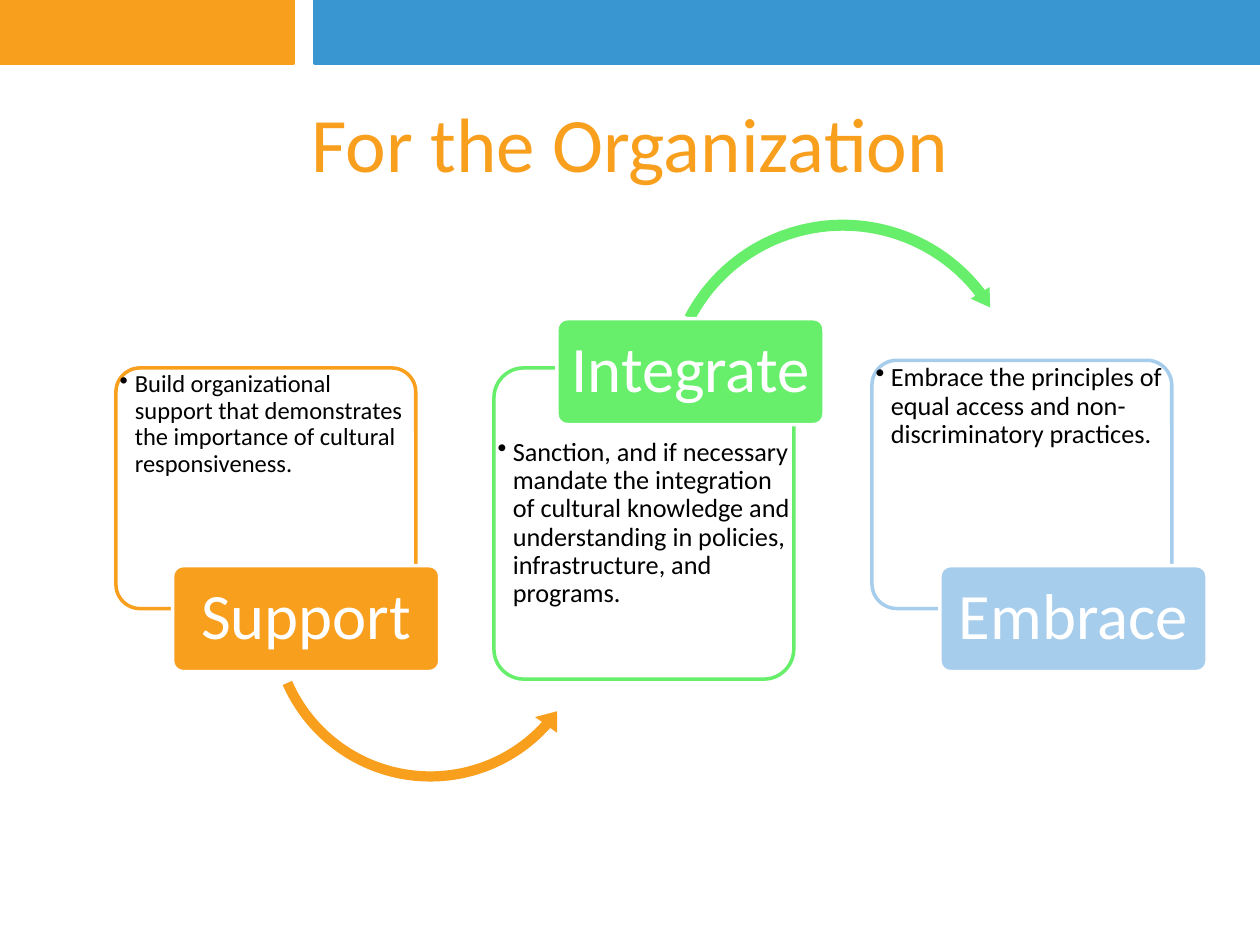
from dataclasses import dataclass
from typing import Optional

import pptx
import pptx.dml.color
import pptx.enum.shapes
import pptx.enum.text
import pptx.oxml.ns
import pptx.util
from lxml import etree

Inches = pptx.util.Inches
Pt = pptx.util.Pt
RGBColor = pptx.dml.color.RGBColor
MSO_SHAPE = pptx.enum.shapes.MSO_SHAPE
MSO_ANCHOR = pptx.enum.text.MSO_ANCHOR
PP_ALIGN = pptx.enum.text.PP_ALIGN
qn = pptx.oxml.ns.qn

ORANGE = RGBColor(0xF8, 0x9F, 0x1E)
BLUE = RGBColor(0x3A, 0x96, 0xD0)
GREEN = RGBColor(0x67, 0xEE, 0x6A)
LIGHT_BLUE = RGBColor(0xA7, 0xCD, 0xED)
WHITE = RGBColor(0xFF, 0xFF, 0xFF)
BLACK = RGBColor(0x00, 0x00, 0x00)

FONT = "Calibri"
CARD_LEFT, CARD_PITCH, CARD_WIDTH = 0.92, 3.0, 2.38
LABEL_WIDTH, LABEL_HEIGHT = 2.12, 0.84
CORNER = 0.1
BULLET_INDENT = 0.12


@dataclass
class Arrow:
    kind: MSO_SHAPE
    left: float
    top: float
    size: float
    adjustments: tuple[float, ...]


@dataclass
class Stage:
    name: str
    detail: str
    color: RGBColor
    card_top: float
    card_height: float
    text_top: float
    text_size: float
    label_left: float
    label_top: float
    arrow: Optional[Arrow] = None


STAGES = [
    Stage("Support",
          "Build organizational support that demonstrates the importance of "
          "cultural responsiveness.",
          ORANGE, 2.92, 1.91, 2.92, 14, 1.37, 4.49,
          Arrow(MSO_SHAPE.LEFT_CIRCULAR_ARROW, 2.07, 3.58, 2.69,
                (0.03, 3.87, 25.22, 93.84, 0.04))),
    Stage("Integrate",
          "Sanction, and if necessary mandate the integration of cultural "
          "knowledge and understanding in policies, infrastructure, and programs.",
          GREEN, 2.92, 2.47, 3.45, 15, 4.42, 2.53,
          Arrow(MSO_SHAPE.CIRCULAR_ARROW, 5.23, 1.7, 2.92,
                (0.03, 3.53, 193.51, 124.55, 0.03))),
    Stage("Embrace",
          "Embrace the principles of equal access and non-discriminatory practices.",
          LIGHT_BLUE, 2.86, 1.97, 2.86, 15, 7.46, 4.49),
]


def add_filled_shape(slide, kind, left: float, top: float, width: float, height: float,
                     fill: RGBColor, line: Optional[RGBColor] = None,
                     adjustments: tuple[float, ...] = ()):
    shape = slide.shapes.add_shape(
        kind, Inches(left), Inches(top), Inches(width), Inches(height))
    shape.shadow.inherit = False
    shape.fill.solid()
    shape.fill.fore_color.rgb = fill
    if line is None:
        shape.line.fill.background()
    else:
        shape.line.color.rgb = line
        shape.line.width = Pt(2)
    for index, value in enumerate(adjustments):
        shape.adjustments[index] = value
    return shape


def set_opacity(shape, percent: int) -> None:
    color = shape.fill._xPr.find(qn("a:solidFill"))[0]
    etree.SubElement(color, qn("a:alpha")).set("val", str(percent * 1000))


def write_text(shape, text: str, *, size: float, color: RGBColor,
               align=PP_ALIGN.CENTER, anchor=MSO_ANCHOR.MIDDLE,
               insets: tuple[float, float] = (0.1, 0.05),
               line_spacing: float = 1.0, wrap: bool = True,
               bullet: bool = False) -> None:
    frame = shape.text_frame
    frame.word_wrap = wrap
    frame.vertical_anchor = anchor
    frame.margin_left = frame.margin_right = Inches(insets[0])
    frame.margin_top = frame.margin_bottom = Inches(insets[1])
    paragraph = frame.paragraphs[0]
    paragraph.alignment = align
    paragraph.line_spacing = line_spacing
    if bullet:
        properties = paragraph._p.get_or_add_pPr()
        properties.set("marL", str(Inches(BULLET_INDENT)))
        properties.set("indent", str(-Inches(BULLET_INDENT)))
        etree.SubElement(properties, qn("a:buChar")).set("char", "•")
    run = paragraph.add_run()
    run.text = text
    run.font.name = FONT
    run.font.size = Pt(size)
    run.font.color.rgb = color


def add_text_box(slide, left: float, top: float, width: float, height: float):
    return slide.shapes.add_textbox(
        Inches(left), Inches(top), Inches(width), Inches(height))


def add_stage(slide, stage: Stage, column: int) -> None:
    """Draw a card, its bulleted detail, the arrow onward and the label on top."""
    left = CARD_LEFT + column * CARD_PITCH
    card = add_filled_shape(slide, MSO_SHAPE.ROUNDED_RECTANGLE, left, stage.card_top,
                            CARD_WIDTH, stage.card_height, WHITE, stage.color, (CORNER,))
    set_opacity(card, 90)
    detail = add_text_box(slide, left, stage.text_top, CARD_WIDTH, 1.5)
    write_text(detail, stage.detail, size=stage.text_size, color=BLACK,
               align=PP_ALIGN.LEFT, anchor=MSO_ANCHOR.TOP, insets=(0.03, 0.03),
               line_spacing=0.9, bullet=True)
    if stage.arrow:
        arrow = stage.arrow
        add_filled_shape(slide, arrow.kind, arrow.left, arrow.top, arrow.size, arrow.size,
                         stage.color, adjustments=arrow.adjustments)
    label = add_filled_shape(slide, MSO_SHAPE.ROUNDED_RECTANGLE, stage.label_left,
                             stage.label_top, LABEL_WIDTH, LABEL_HEIGHT,
                             stage.color, WHITE, (CORNER,))
    write_text(label, stage.name, size=37, color=WHITE, insets=(0.08, 0.05),
               line_spacing=0.9, wrap=False)


def main() -> None:
    presentation = pptx.Presentation()
    presentation.slide_width = Inches(10)
    presentation.slide_height = Inches(7.5)
    slide = presentation.slides.add_slide(presentation.slide_layouts[6])

    for left, width, color in ((0, 2.33, ORANGE), (2.5, 7.5, BLUE)):
        add_filled_shape(slide, MSO_SHAPE.RECTANGLE, left, 0, width, 0.5, color, color)
    title = add_text_box(slide, 0.5, 0.5, 9, 1.25)
    write_text(title, "For the Organization", size=44, color=ORANGE)
    for column, stage in enumerate(STAGES):
        add_stage(slide, stage, column)

    presentation.save("out.pptx")


if __name__ == "__main__":
    main()
